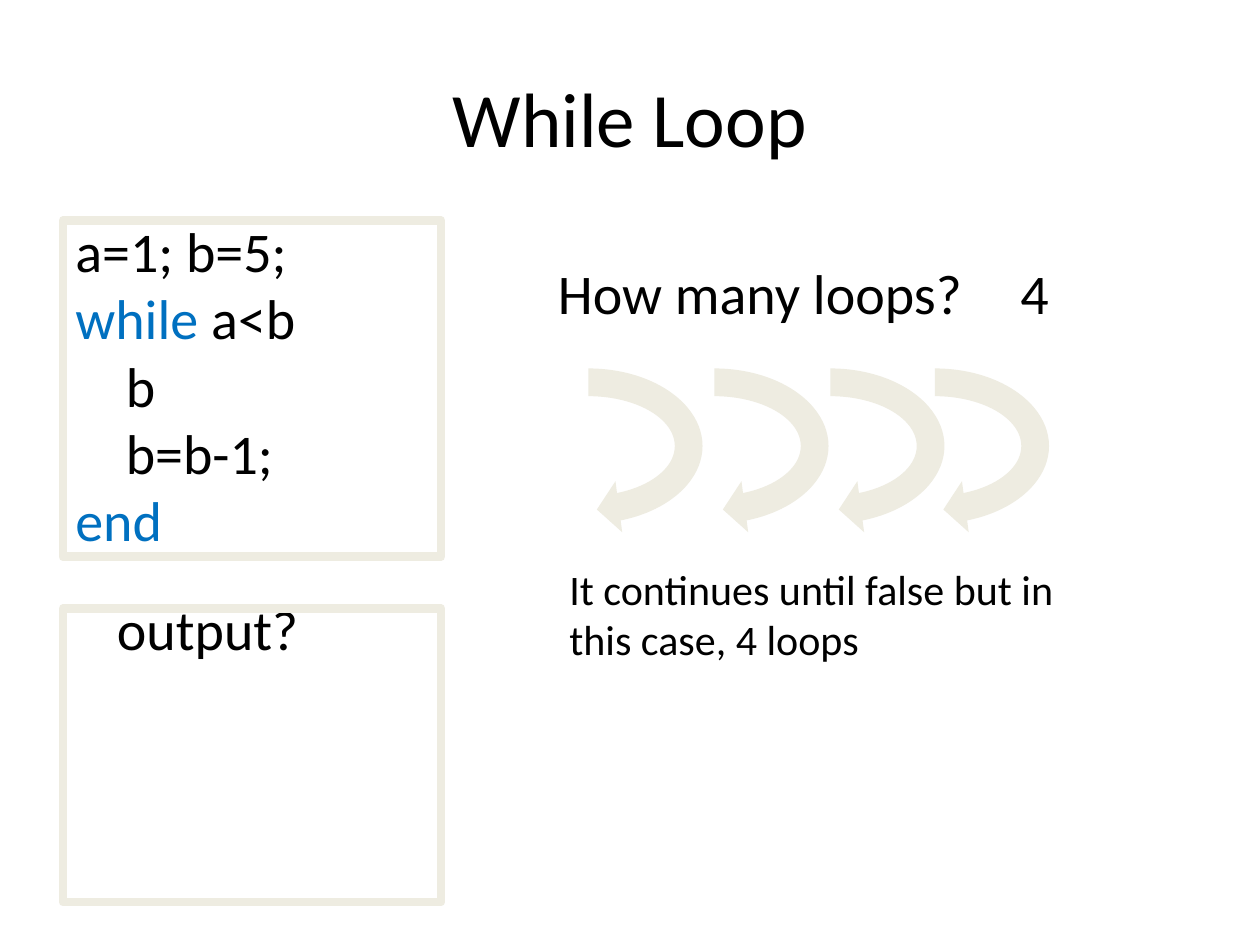
from typing import NamedTuple

from pptx import Presentation
from pptx.dml.color import RGBColor
from pptx.enum.shapes import MSO_SHAPE
from pptx.enum.text import MSO_ANCHOR, PP_ALIGN
from pptx.util import Inches, Pt

BLACK = RGBColor(0x00, 0x00, 0x00)
KEYWORD_BLUE = RGBColor(0x00, 0x70, 0xC0)
CREAM = RGBColor(0xEE, 0xEC, 0xE1)
FONT = "Calibri"
CODE_INDENT = 0.4
ARROW_ADJUSTMENTS = (0.155, 11.423, 200.048, 108, 0.144)


class Box(NamedTuple):
    left: float
    top: float
    width: float
    height: float

    def lengths(self):
        return [Inches(value) for value in self]


class Line(NamedTuple):
    """One line of text: an optional blue keyword, then plain text."""
    plain: str = ""
    keyword: str = ""
    indent: float = 0


class Label(NamedTuple):
    box: Box
    lines: list[Line]
    size: int = 32


LABELS = [
    Label(Box(0.5, 1.67, 3, 2.79), [
        Line("a=1; b=5;"),
        Line(" a<b", keyword="while"),
        Line("b", indent=CODE_INDENT),
        Line("b=b-1;", indent=CODE_INDENT),
        Line(keyword="end"),
    ]),
    Label(Box(4.33, 2, 3.58, 0.64), [Line("How many loops?")]),
    Label(Box(8, 2, 0.75, 0.64), [Line("4")]),
    Label(Box(0.83, 4.67, 3.58, 0.64), [Line("output?")]),
    Label(Box(4.42, 4.42, 4.58, 0.91),
          [Line("It continues until false but in this case, 4 loops")], size=24),
]
FRAMES = [Box(0.5, 1.75, 3, 2.67), Box(0.5, 4.83, 3, 2.33)]
LOOP_ARROWS = [Box(left, 2.54, 1.42, 2) for left in (3.96, 4.96, 5.88, 6.71)]


def add_run(paragraph, text: str, size: int, color: RGBColor) -> None:
    run = paragraph.add_run()
    run.text = text
    for name, value in {"name": FONT, "size": Pt(size)}.items():
        setattr(run.font, name, value)
    run.font.color.rgb = color


def add_label(slide, label: Label) -> None:
    frame = slide.shapes.add_textbox(*label.box.lengths()).text_frame
    frame.word_wrap = True
    for index, line in enumerate(label.lines):
        paragraph = frame.add_paragraph() if index else frame.paragraphs[0]
        if line.indent:
            paragraph._p.get_or_add_pPr().set("marL", str(Inches(line.indent)))
        for text, color in ((line.keyword, KEYWORD_BLUE), (line.plain, BLACK)):
            if text:
                add_run(paragraph, text, label.size, color)


def add_frame(slide, box: Box) -> None:
    frame = slide.shapes.add_shape(MSO_SHAPE.RECTANGLE, *box.lengths())
    frame.shadow.inherit = False
    frame.fill.background()
    frame.line.color.rgb = CREAM
    frame.line.width = Pt(5)


def add_loop_arrow(slide, box: Box) -> None:
    arrow = slide.shapes.add_shape(MSO_SHAPE.CIRCULAR_ARROW, *box.lengths())
    arrow.rotation = 90
    for index, value in enumerate(ARROW_ADJUSTMENTS):
        arrow.adjustments[index] = value
    arrow.shadow.inherit = False
    arrow.fill.solid()
    arrow.fill.fore_color.rgb = CREAM
    arrow.line.fill.background()


def add_title(slide, text: str) -> None:
    title = slide.shapes.title
    title.left, title.top, title.width, title.height = Box(0.5, 0.3, 9, 1.25).lengths()
    title.text_frame.vertical_anchor = MSO_ANCHOR.MIDDLE
    paragraph = title.text_frame.paragraphs[0]
    paragraph.alignment = PP_ALIGN.CENTER
    add_run(paragraph, text, 44, BLACK)


def main() -> None:
    presentation = Presentation()
    presentation.slide_width = Inches(10)
    presentation.slide_height = Inches(7.5)
    slide = presentation.slides.add_slide(presentation.slide_layouts[5])
    add_title(slide, "While Loop")
    for add_part, parts in ((add_label, LABELS), (add_frame, FRAMES),
                            (add_loop_arrow, LOOP_ARROWS)):
        for part in parts:
            add_part(slide, part)
    presentation.save("out.pptx")


if __name__ == "__main__":
    main()
